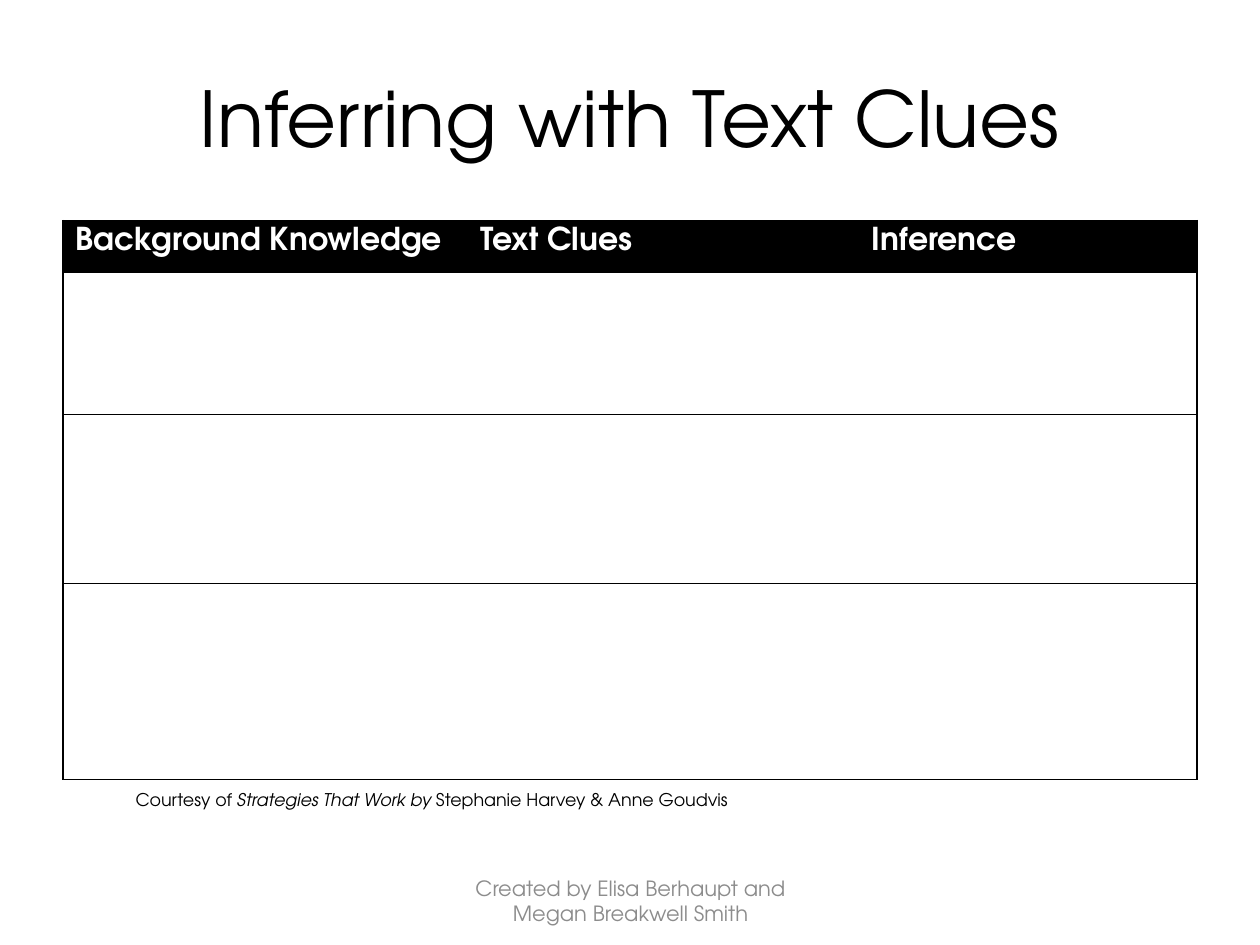
from lxml import etree
from pptx import Presentation
from pptx.dml.color import RGBColor
from pptx.enum import text
from pptx.oxml import ns
from pptx.util import Inches, Pt

FONT = "TeX Gyre Adventor"
COLORS = {"ink": "000000", "paper": "FFFFFF", "muted": "8C8C8C"}
HEADS = ["Background Knowledge", "Text Clues", "Inference"]
COLS = [3.21, 3.11, 2.68]
ROWS = [0.41, 1.13, 1.34, 1.56]


def rgb(name):
    """Return the named colour."""
    return RGBColor.from_string(COLORS[name])


def style(para, size, color, bold=False):
    """Set the font of a paragraph."""
    font = para.font
    font.name, font.size, font.bold = FONT, Pt(size), bold
    font.color.rgb = rgb(color)


def add_text(slide, box, runs, size, color="ink", anchor=text.MSO_ANCHOR.MIDDLE, top=0.05):
    """Place one centred paragraph of (words, italic) runs in a box."""
    frame = slide.shapes.add_textbox(*map(Inches, box)).text_frame
    frame.word_wrap = True
    frame.vertical_anchor = anchor
    frame.margin_top = Inches(top)
    para = frame.paragraphs[0]
    para.alignment = text.PP_ALIGN.CENTER
    style(para, size, color)
    for words, slant in runs:
        run = para.add_run()
        run.text = words
        if slant:
            run.font.italic = True


def set_lines(cell, sides):
    """Draw the given sides of a cell and clear the others."""
    props = cell._tc.get_or_add_tcPr()
    for spot, side in enumerate("LRTB"):
        line = etree.Element(ns.qn(f"a:ln{side}"), w=str(Pt(0.75)))
        if side in sides:
            fill = etree.SubElement(line, ns.qn("a:solidFill"))
            etree.SubElement(fill, ns.qn("a:srgbClr"), val=COLORS["ink"])
        else:
            etree.SubElement(line, ns.qn("a:noFill"))
        props.insert(spot, line)


def add_grid(slide, left, top):
    """Place the chart with a black header and ruled empty rows."""
    box = map(Inches, (left, top, sum(COLS), sum(ROWS)))
    table = slide.shapes.add_table(len(ROWS), len(COLS), *box).table
    table.first_row = table.horz_banding = False
    for col, width in zip(table.columns, COLS):
        col.width = Inches(width)
    for r, height in enumerate(ROWS):
        table.rows[r].height = Inches(height)
        for c, head in enumerate(HEADS):
            cell = table.cell(r, c)
            if r == 0:
                cell.text = head
                style(cell.text_frame.paragraphs[0], 18, "paper", True)
                cell.fill.solid()
                cell.fill.fore_color.rgb = rgb("ink")
            else:
                cell.fill.background()
            ends = ("L" if c == 0 else "") + ("R" if c == len(COLS) - 1 else "")
            set_lines(cell, "TB" + ends)


def main():
    """Build and save the slide."""
    deck = Presentation()
    deck.slide_width, deck.slide_height = Inches(10), Inches(7.5)
    slide = deck.slides.add_slide(deck.slide_layouts[6])
    add_text(slide, (0.5, 0.3, 9, 1.25), [("Inferring with Text Clues", False)], 44)
    add_grid(slide, 0.5, 1.75)
    add_text(slide, (3.42, 6.95, 3.17, 0.4),
             [("Created by Elisa Berhaupt and Megan Breakwell Smith", False)], 12, "muted")
    credit = [("Courtesy of ", False), ("Strategies That Work by ", True),
              ("Stephanie Harvey & Anne Goudvis", False)]
    add_text(slide, (0.5, 5.91, 5.85, 1.04), credit, 10,
             anchor=text.MSO_ANCHOR.TOP, top=0.35)
    deck.save("out.pptx")


if __name__ == "__main__":
    main()
